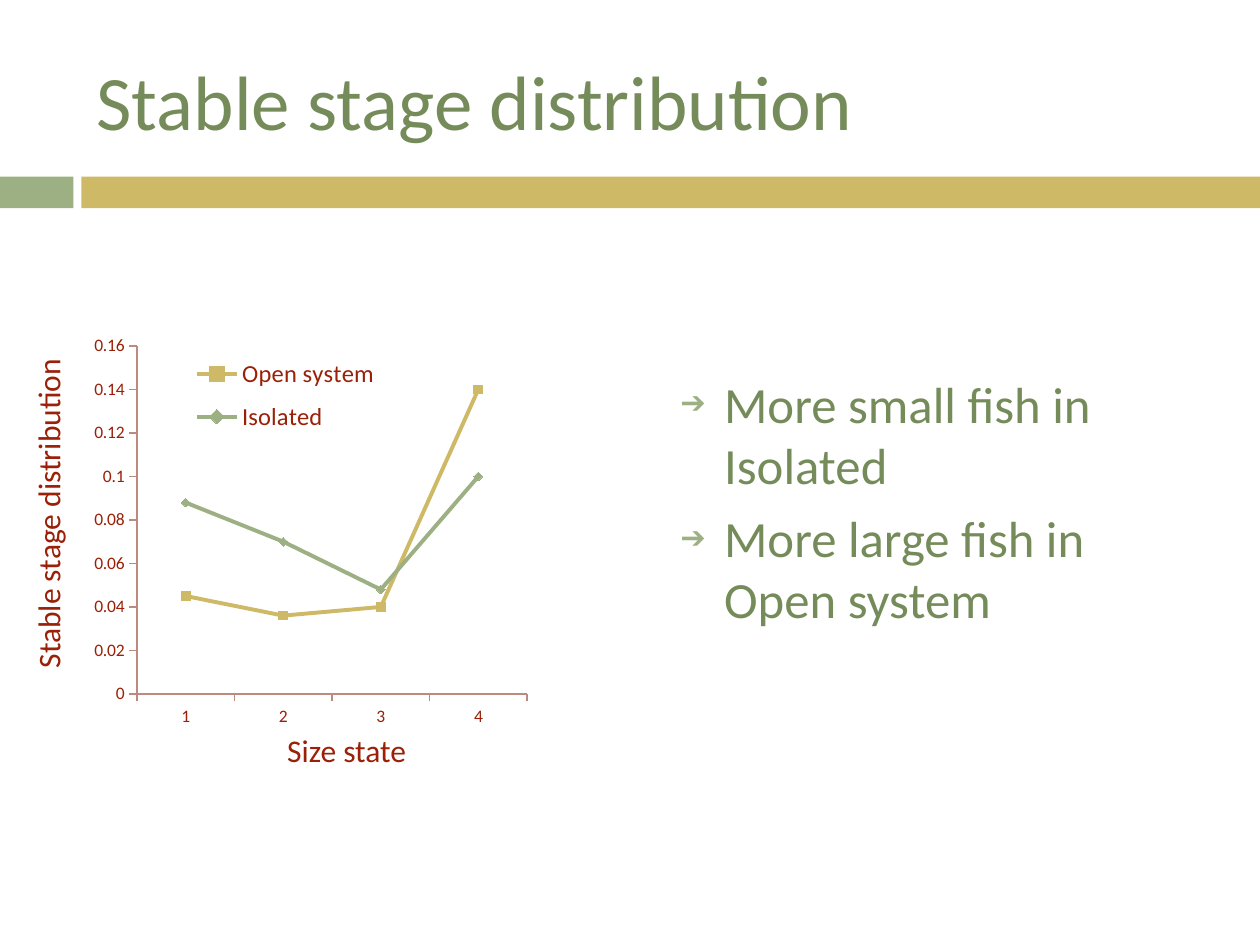
from dataclasses import dataclass

from lxml import etree
from pptx import Presentation
from pptx.chart import data
from pptx.dml import color
from pptx.enum import chart as ch, shapes, text
from pptx.oxml import ns
from pptx.util import Pt


@dataclass(frozen=True)
class Theme:
    font: str = "Calibri"
    green: str = "758C5A"
    sage: str = "9CB084"
    gold: str = "CEB966"
    red: str = "9A2008"
    rose: str = "BE8A80"
    head: int = 44
    body: int = 29
    label: int = 18
    key: int = 14
    tick: int = 10


T = Theme()


def rgb(code):
    return color.RGBColor.from_string(code)


def apply(item, **vals):
    for name, val in vals.items():
        setattr(item, name, val)


def style(font, size, code):
    apply(font, name=T.font, size=Pt(size))
    font.color.rgb = rgb(code)


def place(item, left, top, width, height):
    apply(item, left=Pt(left), top=Pt(top), width=Pt(width), height=Pt(height))


def add_bar(slide, left, width, code):
    bar = slide.shapes.add_shape(
        shapes.MSO_SHAPE.RECTANGLE, Pt(left), Pt(101), Pt(width), Pt(18))
    bar.shadow.inherit = False
    bar.fill.solid()
    bar.fill.fore_color.rgb = rgb(code)
    bar.line.fill.background()


def add_title(slide, words):
    title = slide.shapes.title
    place(title, 48, 18, 642, 78)
    apply(title.text_frame, text=words, word_wrap=True,
          vertical_anchor=text.MSO_ANCHOR.MIDDLE)
    para = title.text_frame.paragraphs[0]
    para.alignment = text.PP_ALIGN.LEFT
    style(para.runs[0].font, T.head, T.green)


def add_bullet(para):
    props = para._p.get_or_add_pPr()
    apply_xml = {"marL": Pt(25), "indent": -Pt(25)}
    for name, val in apply_xml.items():
        props.set(name, str(val))
    tint = etree.SubElement(props, ns.qn("a:buClr"))
    etree.SubElement(tint, ns.qn("a:srgbClr"), val=T.sage)
    etree.SubElement(props, ns.qn("a:buSzPct"), val="60000")
    etree.SubElement(props, ns.qn("a:buChar"), char="➔")


def add_list(slide, items):
    body = slide.placeholders[1]
    place(body, 381.6, 209.5, 306, 276)
    frame = body.text_frame
    apply(frame, text="\n".join(items), word_wrap=True,
          vertical_anchor=text.MSO_ANCHOR.TOP)
    for i, para in enumerate(frame.paragraphs):
        add_bullet(para)
        para.space_before = Pt(7 if i else 0)
        style(para.runs[0].font, T.body, T.green)


def add_label(slide, words, left, top, width, turn=0):
    box = slide.shapes.add_textbox(Pt(left), Pt(top), Pt(width), Pt(29))
    box.rotation = turn
    apply(box.text_frame, text=words, word_wrap=False,
          auto_size=text.MSO_AUTO_SIZE.SHAPE_TO_FIT_TEXT)
    style(box.text_frame.paragraphs[0].runs[0].font, T.label, T.red)


def set_layout(part, left, top, width, height, inner=False):
    for old in part.findall(ns.qn("c:layout")):
        part.remove(old)
    layout = etree.Element(ns.qn("c:layout"))
    manual = etree.SubElement(layout, ns.qn("c:manualLayout"))
    vals = {"xMode": "edge", "yMode": "edge",
            "x": left, "y": top, "w": width, "h": height}
    if inner:
        vals = {"layoutTarget": "inner", **vals}
    for name, val in vals.items():
        etree.SubElement(manual, ns.qn(f"c:{name}"), val=str(val))
    part.insert(0 if inner else 1, layout)


def style_axis(axis):
    apply(axis, has_major_gridlines=False,
          major_tick_mark=ch.XL_TICK_MARK.OUTSIDE,
          minor_tick_mark=ch.XL_TICK_MARK.NONE)
    axis.format.line.color.rgb = rgb(T.rose)
    axis.format.line.width = Pt(0.75)
    style(axis.tick_labels.font, T.tick, T.red)


def style_line(line, code, mark):
    line.smooth = False
    line.format.line.color.rgb = rgb(code)
    line.format.line.width = Pt(2.25)
    apply(line.marker, style=mark, size=5)
    line.marker.format.fill.solid()
    line.marker.format.fill.fore_color.rgb = rgb(code)
    line.marker.format.line.color.rgb = rgb(code)


def add_plot(slide):
    source = data.CategoryChartData()
    source.categories = ["1", "2", "3", "4"]
    source.add_series("Open system", (0.045, 0.036, 0.04, 0.14))
    source.add_series("Isolated", (0.088, 0.07, 0.048, 0.1))
    chart = slide.shapes.add_chart(
        ch.XL_CHART_TYPE.LINE_MARKERS,
        Pt(48), Pt(186), Pt(378), Pt(234), source).chart
    apply(chart, has_title=False, has_legend=True)
    style(chart.font, T.tick, T.red)
    apply(chart.legend, position=ch.XL_LEGEND_POSITION.RIGHT,
          include_in_layout=False)
    style(chart.legend.font, T.key, T.red)
    style_axis(chart.category_axis)
    style_axis(chart.value_axis)
    apply(chart.value_axis, minimum_scale=0, maximum_scale=0.16,
          major_unit=0.02)
    apply(chart.value_axis.tick_labels, number_format="General",
          number_format_is_linked=False)
    plot = chart.plots[0]
    plot.vary_by_categories = False
    looks = ((T.gold, ch.XL_MARKER_STYLE.SQUARE),
             (T.sage, ch.XL_MARKER_STYLE.DIAMOND))
    for line, look in zip(plot.series, looks):
        style_line(line, *look)
    area = chart._chartSpace.chart.plotArea
    set_layout(area, 0.08, 0.05, 0.59, 0.85, inner=True)
    set_layout(chart.legend._element, 0.16, 0.05, 0.29, 0.24)


def main():
    deck = Presentation()
    apply(deck, slide_width=Pt(720), slide_height=Pt(540))
    slide = deck.slides.add_slide(deck.slide_layouts[1])
    add_bar(slide, 0, 42, T.sage)
    add_bar(slide, 46.5, 673.5, T.gold)
    add_title(slide, "Stable stage distribution")
    add_list(slide, ("More small fish in Isolated",
                     "More large fish in Open system"))
    add_plot(slide)
    add_label(slide, "Stable stage distribution", -69, 278, 193, 270)
    add_label(slide, "Size state", 157, 414, 83.5)
    deck.save("out.pptx")


if __name__ == "__main__":
    main()
